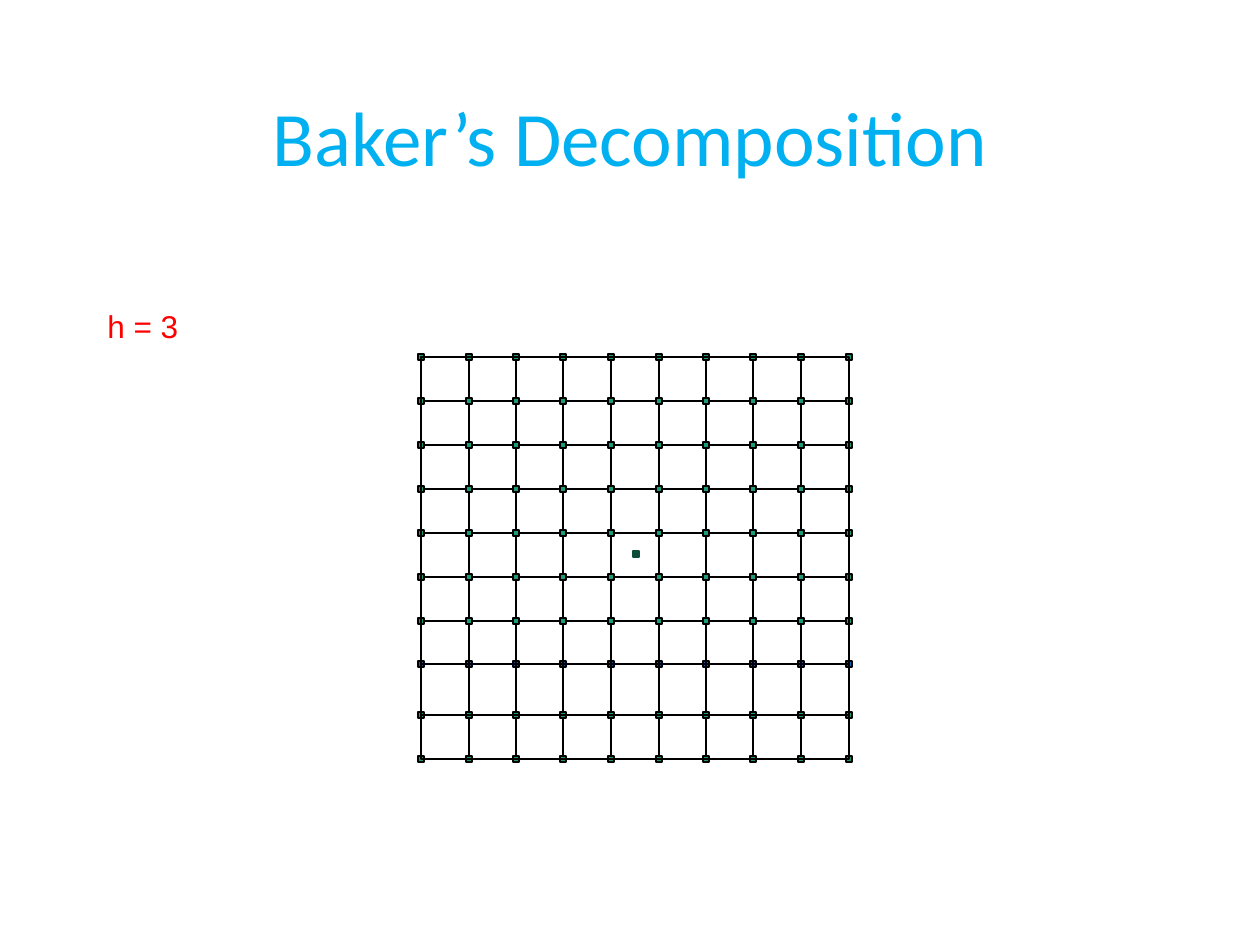
import itertools
from dataclasses import dataclass

import pptx
import pptx.dml.color
import pptx.enum.shapes
import pptx.enum.text
import pptx.oxml.ns
import pptx.util
from lxml import etree

PX = 914400 // 126  # EMU in one px


@dataclass(frozen=True)
class Theme:
    title: str = "00B0F0"
    label: str = "FF0000"
    line: str = "000000"
    vertex: str = "1D9A78"
    cut_vertex: str = "0563C1"
    center: str = "0E4D3C"
    title_font: str = "Calibri"
    label_font: str = "Arial"
    title_size: int = 44
    label_size: int = 18
    line_width: float = 1.5


THEME = Theme()
DOT = 6
CUT_ROW = 7
COLUMNS = [421 + round(47.5 * i) for i in range(10)]
ROWS = list(itertools.accumulate([44, 44, 44, 44, 44, 44, 43, 51, 44], initial=357))


def color(code):
    return pptx.dml.color.RGBColor.from_string(code)


def place(box, left, top, width, height):
    box.left, box.top, box.width, box.height = (
        n * PX for n in (left, top, width, height))


def write(box, text, *, font, size, fill, align=None, anchor=None, spacing=None):
    frame = box.text_frame
    frame.word_wrap = True
    frame.vertical_anchor = anchor
    para = frame.paragraphs[0]
    para.alignment = align
    para.line_spacing = spacing
    span = para.add_run()
    span.text = text
    span.font.name = font
    span.font.size = pptx.util.Pt(size)
    span.font.color.rgb = color(fill)


def stroke(line, code=THEME.line):
    line.color.rgb = color(code)
    line.width = pptx.util.Pt(THEME.line_width)


def add_rectangle(page, left, top, width, height, fill=None, outline=THEME.line):
    shape = page.shapes.add_shape(
        pptx.enum.shapes.MSO_SHAPE.RECTANGLE,
        left * PX, top * PX, width * PX, height * PX)
    shape.shadow.inherit = False
    if fill:
        shape.fill.solid()
        shape.fill.fore_color.rgb = color(fill)
    else:
        shape.fill.background()
    stroke(shape.line, outline)


def add_dot(page, x, y, fill, outline=THEME.line):
    """Add a small square centred on x, y."""
    add_rectangle(page, x - DOT // 2, y - DOT // 2, DOT, DOT, fill, outline)


def add_line(page, x1, y1, x2, y2):
    line = page.shapes.add_connector(
        pptx.enum.shapes.MSO_CONNECTOR.STRAIGHT, x1 * PX, y1 * PX, x2 * PX, y2 * PX)
    stroke(line.line)
    etree.SubElement(line._element.spPr, pptx.oxml.ns.qn("a:effectLst"))


def add_row_lines(page, rows):
    for y in rows:
        add_line(page, COLUMNS[0], y, COLUMNS[-1], y)


def add_dot_row(page, y, fill):
    for x in COLUMNS:
        add_dot(page, x, y, fill)


def add_grid(page):
    """Draw the grid; the lowest lines and the frame lie over the vertices."""
    left, right, top, bottom = COLUMNS[0], COLUMNS[-1], ROWS[0], ROWS[-1]
    add_dot_row(page, ROWS[CUT_ROW], THEME.cut_vertex)
    for x in COLUMNS[1:-1]:
        add_line(page, x, top, x, bottom)
    add_row_lines(page, ROWS[1:CUT_ROW])
    for y in ROWS[:CUT_ROW] + ROWS[CUT_ROW + 1:]:
        add_dot_row(page, y, THEME.vertex)
    add_row_lines(page, ROWS[CUT_ROW:-1])
    add_rectangle(page, left, top, right - left, bottom - top)
    add_dot(page, (left + right) // 2 + 1, 554, THEME.center, THEME.center)


def main():
    deck = pptx.Presentation()
    deck.slide_width, deck.slide_height = 1260 * PX, 945 * PX
    page = deck.slides.add_slide(deck.slide_layouts[5])

    title = page.shapes.title
    place(title, 87, 50, 1086, 183)
    write(title, "Baker’s Decomposition", font=THEME.title_font,
          size=THEME.title_size, fill=THEME.title, spacing=0.9,
          align=pptx.enum.text.PP_ALIGN.CENTER,
          anchor=pptx.enum.text.MSO_ANCHOR.MIDDLE)

    add_grid(page)

    label = page.shapes.add_textbox(95 * PX, 301 * PX, 139 * PX, 50 * PX)
    write(label, "h = 3", font=THEME.label_font, size=THEME.label_size,
          fill=THEME.label)
    deck.save("out.pptx")


if __name__ == "__main__":
    main()
